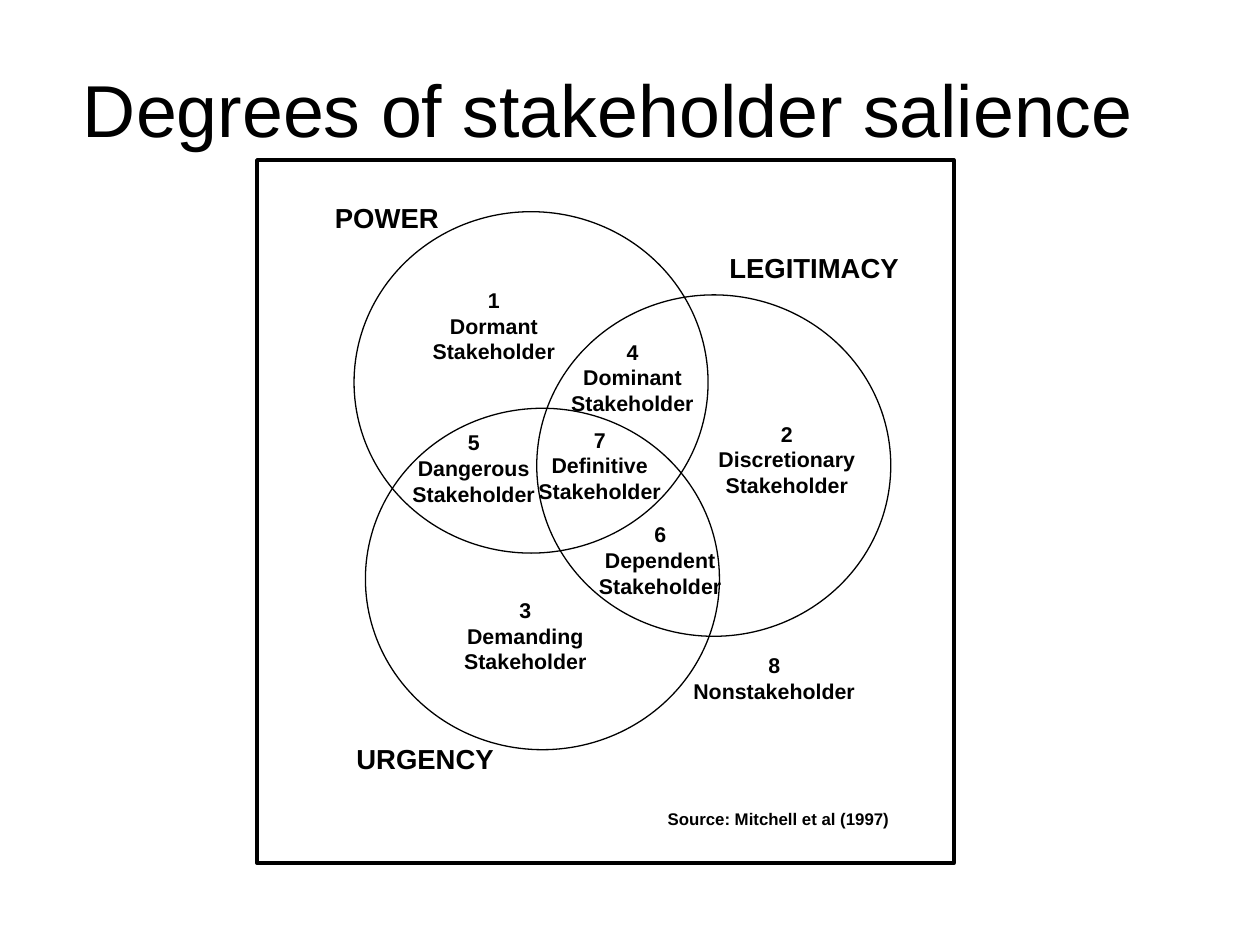
from pptx import Presentation
from pptx import util as u
from pptx.dml.color import RGBColor
from pptx.enum import shapes, text

INK = {"line": "000000", "text": "000000"}
CIRCLES = [(2.81, 1.68), (2.9, 3.24), (4.26, 2.34)]
GROUPS = [
    (3.33, 2.23, 1.18, "1", "Dormant", "Stakeholder"),
    (4.43, 2.64, 1.18, "4", "Dominant", "Stakeholder"),
    (5.6, 3.29, 1.29, "2", "Discretionary", "Stakeholder"),
    (3.17, 3.36, 1.18, "5", "Dangerous", "Stakeholder"),
    (4.17, 3.34, 1.18, "7", "Definitive", "Stakeholder"),
    (3.58, 4.69, 1.18, "3", "Demanding", "Stakeholder"),
    (4.65, 4.09, 1.18, "6", "Dependent", "Stakeholder"),
    (5.4, 5.13, 1.49, "8", "Nonstakeholder"),
]
TRAITS = [
    (2.56, 1.55, 1.03, "POWER"),
    (5.69, 1.94, 1.56, "LEGITIMACY"),
    (2.73, 5.84, 1.3, "URGENCY"),
]


class Deck:
    """Holds the font, the colours and the current slide."""

    def __init__(self, font, ink):
        self.font, self.ink = font, ink
        self.show = Presentation()
        self.show.slide_width, self.show.slide_height = u.Inches(10), u.Inches(7.5)
        self.slide = self.show.slides.add_slide(self.show.slide_layouts[5])

    def color(self, name):
        return RGBColor.from_string(self.ink[name])

    def place(self, x, y, w, h):
        return [u.Inches(n) for n in (x, y, w, h)]

    def fill_text(self, frame, lines, size, bold, align):
        frame.text = "\n".join(lines)
        for para in frame.paragraphs:
            para.alignment = align
            font = para.font
            font.name, font.size, font.bold = self.font, u.Pt(size), bold
            font.color.rgb = self.color("text")

    def title(self, words, x, y, w, h, size):
        head = self.slide.shapes.title
        head.left, head.top, head.width, head.height = self.place(x, y, w, h)
        head.text_frame.vertical_anchor = text.MSO_ANCHOR.MIDDLE
        self.fill_text(head.text_frame, [words], size, False, text.PP_ALIGN.CENTER)

    def outline(self, kind, x, y, w, h, width):
        shape = self.slide.shapes.add_shape(kind, *self.place(x, y, w, h))
        shape.shadow.inherit = False
        shape.fill.background()
        shape.line.color.rgb = self.color("line")
        shape.line.width = u.Pt(width)

    def label(self, lines, x, y, w, h, size, align=text.PP_ALIGN.LEFT):
        box = self.slide.shapes.add_textbox(*self.place(x, y, w, h))
        box.text_frame.word_wrap = False
        box.text_frame.auto_size = text.MSO_AUTO_SIZE.SHAPE_TO_FIT_TEXT
        self.fill_text(box.text_frame, lines, size, True, align)


def main():
    deck = Deck("Arial", INK)
    deck.title("Degrees of stakeholder salience", 0, 0.45, 9.65, 0.81, 42)
    deck.outline(shapes.MSO_SHAPE.RECTANGLE, 2.04, 1.27, 5.53, 5.58, 2.25)
    for x, y in CIRCLES:
        deck.outline(shapes.MSO_SHAPE.OVAL, x, y, 2.81, 2.71, 0.75)
    for x, y, w, *lines in GROUPS:
        high = 0.1 + 0.21 * len(lines)
        deck.label(lines, x, y, w, high, 12.2, text.PP_ALIGN.CENTER)
    for x, y, w, name in TRAITS:
        deck.label([name], x, y, w, 0.36, 15.7)
    deck.label(["Source: Mitchell et al (1997)"], 5.2, 6.37, 1.98, 0.26, 9.6)
    deck.show.save("out.pptx")


if __name__ == "__main__":
    main()
